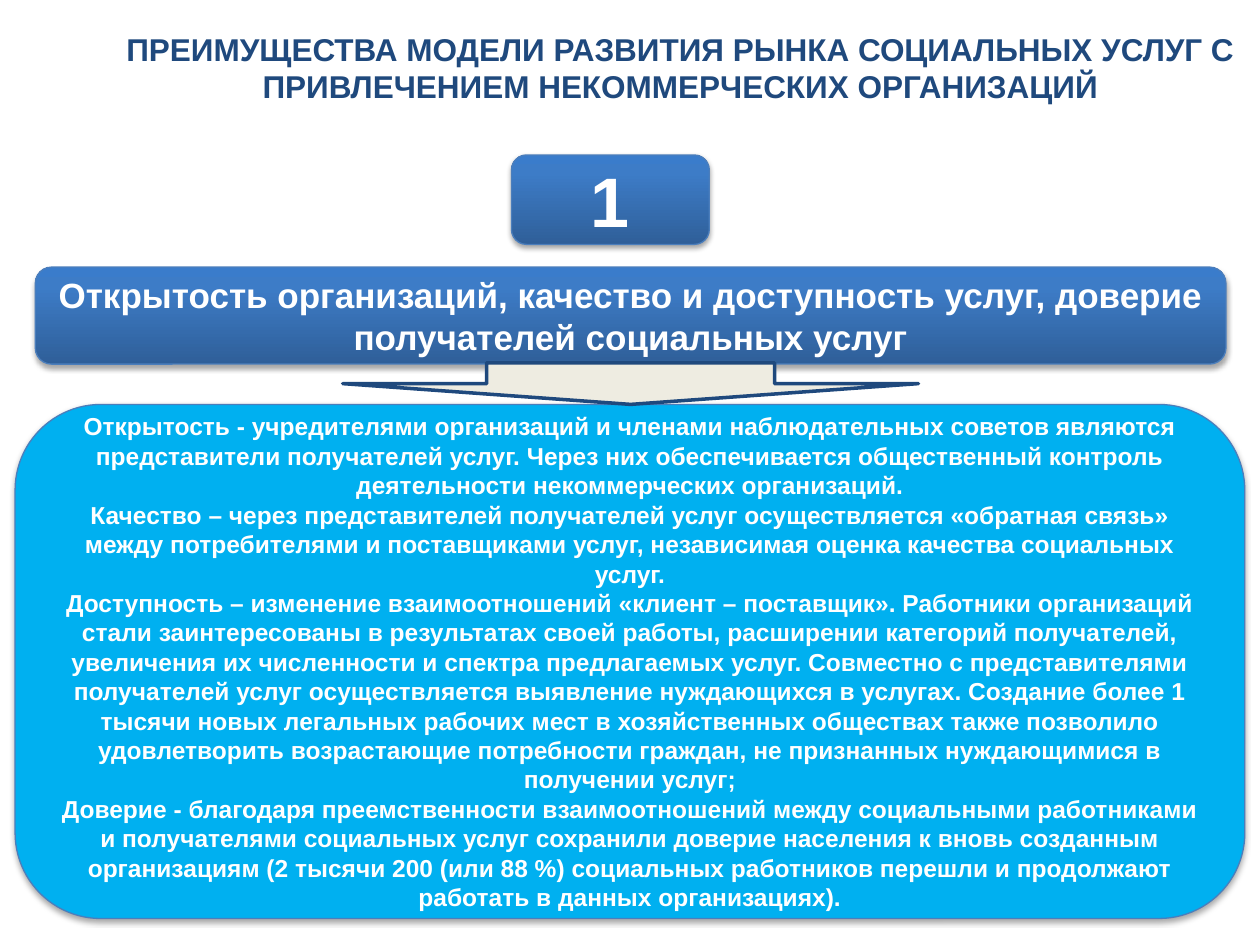
from lxml import etree
from pptx import Presentation
from pptx import util as u
from pptx.dml.color import RGBColor
from pptx.enum import shapes, text
from pptx.oxml.ns import qn

COLORS = {
    "title": "1F497D", "white": "FFFFFF", "border": "4B7EBC",
    "panel": "00B0F0", "arrow": "EEECE1", "shadow": "000000",
}
GRADIENT = [(0, "2F5F99"), (80, "3D7CC7"), (100, "3A7CCB")]

TITLE = ("ПРЕИМУЩЕСТВА МОДЕЛИ РАЗВИТИЯ РЫНКА СОЦИАЛЬНЫХ УСЛУГ С "
         "ПРИВЛЕЧЕНИЕМ НЕКОММЕРЧЕСКИХ ОРГАНИЗАЦИЙ")
HEADING = ("Открытость организаций, качество и доступность услуг, доверие "
           "получателей социальных услуг")
BENEFITS = [
    "Открытость - учредителями организаций и членами наблюдательных советов "
    "являются представители получателей услуг. Через них обеспечивается "
    "общественный контроль деятельности некоммерческих организаций.",
    "Качество – через представителей получателей услуг осуществляется "
    "«обратная связь» между потребителями и поставщиками услуг, независимая "
    "оценка качества социальных услуг.",
    "Доступность – изменение взаимоотношений «клиент – поставщик». Работники "
    "организаций стали заинтересованы в результатах своей работы, расширении "
    "категорий получателей, увеличения их численности и спектра предлагаемых "
    "услуг. Совместно с представителями получателей услуг осуществляется "
    "выявление нуждающихся в услугах. Создание более 1 тысячи новых легальных "
    "рабочих мест в хозяйственных обществах также позволило удовлетворить "
    "возрастающие потребности граждан, не признанных нуждающимися в получении "
    "услуг;",
    "Доверие - благодаря преемственности взаимоотношений между социальными "
    "работниками и получателями социальных услуг сохранили доверие населения "
    "к вновь созданным организациям (2 тысячи 200 (или 88 %) социальных "
    "работников перешли и продолжают работать в данных организациях).",
]


def write(sp, lines, size, color):
    """Fill a shape with centred bold paragraphs."""
    tf = sp.text_frame
    tf.word_wrap = True
    tf.vertical_anchor = text.MSO_ANCHOR.MIDDLE
    tf.text = "\n".join(lines)
    for p in tf.paragraphs:
        p.alignment = text.PP_ALIGN.CENTER
        for r in p.runs:
            r.font.name = "Arial"
            r.font.size = u.Pt(size)
            r.font.bold = True
            r.font.color.rgb = RGBColor.from_string(COLORS[color])


def add_shape(s, kind, box, fill, line, width):
    """Add a preset shape; a fill of None means the blue gradient."""
    sp = s.shapes.add_shape(kind, *map(u.Inches, box))
    sp.shadow.inherit = False
    if fill:
        sp.fill.solid()
        sp.fill.fore_color.rgb = RGBColor.from_string(COLORS[fill])
    else:
        sp.fill.gradient()
        grad = sp._element.spPr.find(qn("a:gradFill"))
        stops = grad.find(qn("a:gsLst"))
        for old in list(stops):
            stops.remove(old)
        for pos, color in GRADIENT:
            gs = etree.SubElement(stops, qn("a:gs"), pos=str(pos * 1000))
            etree.SubElement(gs, qn("a:srgbClr"), val=color)
        grad.find(qn("a:lin")).set("ang", str(270 * 60000))
    sp.line.color.rgb = RGBColor.from_string(COLORS[line])
    sp.line.width = u.Pt(width)
    return sp


prs = Presentation()
prs.slide_width, prs.slide_height = u.Inches(10), u.Inches(7.5)
s = prs.slides.add_slide(prs.slide_layouts[6])

title = s.shapes.add_textbox(*map(u.Inches, (0.8, 0.19, 9.2, 0.69)))
tf = title.text_frame
tf.margin_left = tf.margin_right = u.Inches(0.08)
tf.margin_top = tf.margin_bottom = u.Inches(0.04)
write(title, [TITLE], 18, "title")

boxes = [
    ((0.28, 2.12, 9.45, 0.77), None, [HEADING], 20),
    ((0.12, 3.21, 9.76, 4.08), "panel", BENEFITS, 14),
    ((4.06, 1.23, 1.57, 0.71), None, ["1"], 40),
]
for box, fill, lines, size in boxes:
    sp = add_shape(s, shapes.MSO_SHAPE.ROUNDED_RECTANGLE, box, fill, "border", 0.75)
    write(sp, lines, size, "white")
    effects = sp._element.spPr.find(qn("a:effectLst"))
    shadow = etree.SubElement(
        effects, qn("a:outerShdw"), blurRad=str(u.Pt(3.1)), dist=str(u.Pt(1.8)),
        dir=str(90 * 60000), rotWithShape="0")
    color = etree.SubElement(shadow, qn("a:srgbClr"), val=COLORS["shadow"])
    etree.SubElement(color, qn("a:alpha"), val="35000")

add_shape(s, shapes.MSO_SHAPE.DOWN_ARROW, (2.72, 2.88, 4.57, 0.33),
          "arrow", "title", 2)

prs.save("out.pptx")
